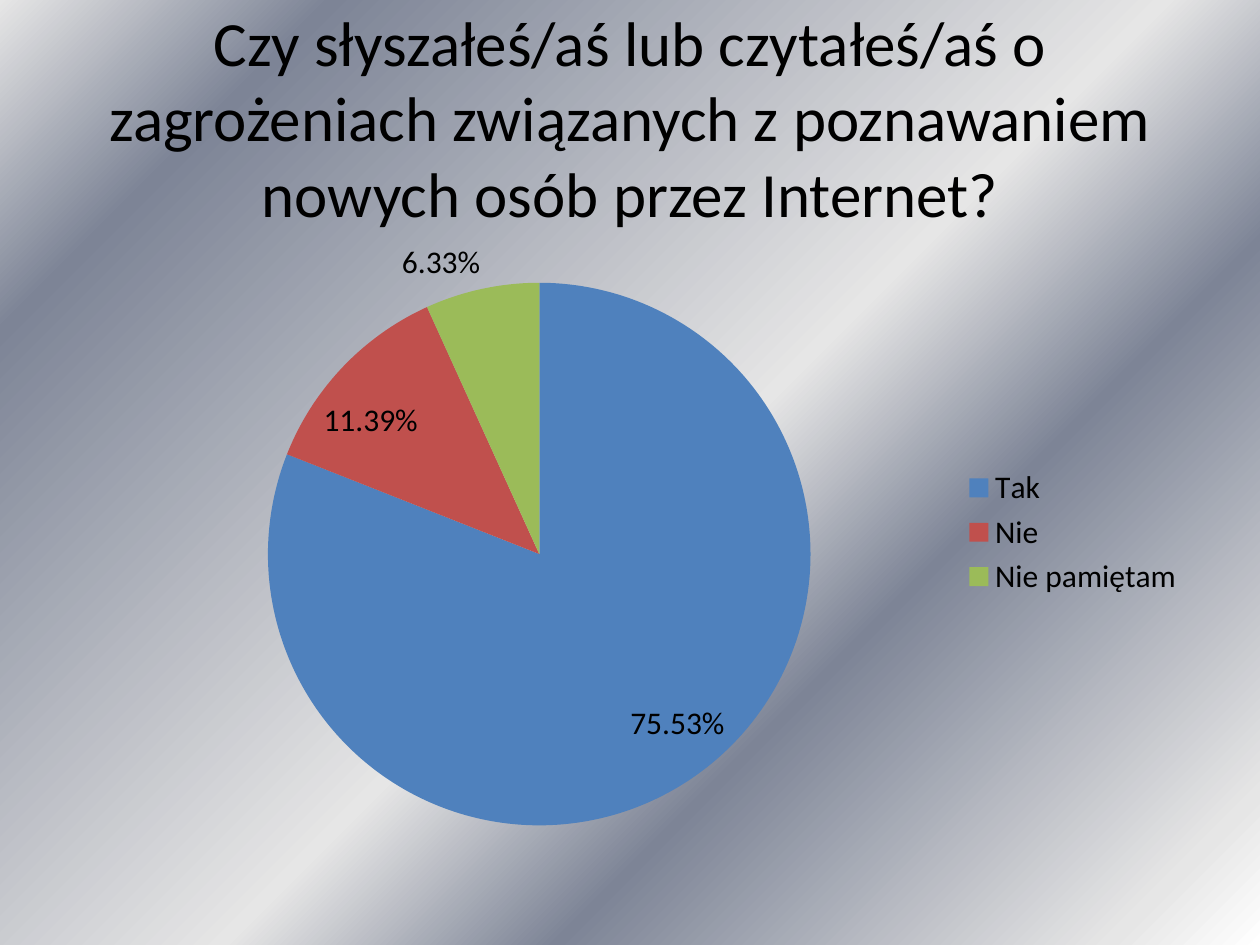
from dataclasses import dataclass

from lxml import etree
from pptx import Presentation
from pptx.chart.data import CategoryChartData
from pptx.dml.color import RGBColor
from pptx.enum.chart import XL_CHART_TYPE, XL_LABEL_POSITION, XL_LEGEND_POSITION
from pptx.enum.text import MSO_ANCHOR, PP_ALIGN
from pptx.oxml import parse_xml
from pptx.oxml.ns import nsdecls, qn
from pptx.util import Inches, Pt

PIE = XL_CHART_TYPE.PIE
BEST_FIT = XL_LABEL_POSITION.BEST_FIT
RIGHT = XL_LEGEND_POSITION.RIGHT
MIDDLE = MSO_ANCHOR.MIDDLE
CENTER = PP_ALIGN.CENTER


@dataclass(frozen=True)
class Theme:
    font: str = "Calibri"
    ink: str = "000000"
    title: int = 36
    label: int = 18
    slices: tuple = ("4F81BD", "C0504D", "9BBB59")
    # Background stops: percent, colour
    stops: tuple = ((0, "FFFFFF"), (7, "E6E6E6"), (32, "7D8496"),
                    (47, "E6E6E6"), (85, "7D8496"), (100, "E6E6E6"))
    angle: int = 135


class Page:
    def __init__(self, slide, theme):
        self.slide = slide
        self.theme = theme

    def style(self, font, size):
        font.name = self.theme.font
        font.size = Pt(size)
        font.color.rgb = RGBColor.from_string(self.theme.ink)

    def backdrop(self):
        fill = self.slide.background.fill
        fill.gradient()
        fill.gradient_angle = self.theme.angle
        stops = next(self.slide.element.iter(qn("a:gsLst")))
        for old in list(stops):
            stops.remove(old)
        for place, color in self.theme.stops:
            stop = etree.SubElement(stops, qn("a:gs"), pos=str(place * 1000))
            etree.SubElement(stop, qn("a:srgbClr"), val=color)

    def text(self, words, *, box, size, align=CENTER, anchor=MIDDLE):
        shape = self.slide.shapes.add_textbox(*map(Inches, box))
        frame = shape.text_frame
        frame.word_wrap = True
        frame.vertical_anchor = anchor
        para = frame.paragraphs[0]
        para.alignment = align
        run = para.add_run()
        run.text = words
        self.style(run.font, size)

    def pie(self, name, shares, *, box, plot):
        """Draw a pie; plot is its place as fractions of the chart box."""
        data = CategoryChartData(number_format="0.00%")
        data.categories = list(shares)
        data.add_series(name, list(shares.values()))
        frame = self.slide.shapes.add_chart(PIE, *map(Inches, box), data)
        chart = frame.chart
        chart.has_title = False
        self.style(chart.font, self.theme.label)
        chart.has_legend = True
        chart.legend.position = RIGHT
        chart.legend.include_in_layout = False

        pie = chart.plots[0]
        pie.vary_by_categories = True
        for spot, color in enumerate(self.theme.slices):
            fill = pie.series[0].points[spot].format.fill
            fill.solid()
            fill.fore_color.rgb = RGBColor.from_string(color)
        pie.has_data_labels = True
        labels = pie.data_labels
        labels.show_value = True
        labels.show_percentage = False
        labels.number_format = "0.00%"
        labels.number_format_is_linked = False
        labels.position = BEST_FIT
        self.style(labels.font, self.theme.label)
        self.place(chart, plot)

    def place(self, chart, plot):
        """Fix the inner plot area by hand."""
        modes = '<c:xMode val="edge"/><c:yMode val="edge"/>'
        sides = "".join(f'<c:{key} val="{part}"/>'
                        for key, part in zip("xywh", plot))
        layout = parse_xml(
            f'<c:layout {nsdecls("c")}><c:manualLayout>'
            f'<c:layoutTarget val="inner"/>{modes}{sides}'
            '</c:manualLayout></c:layout>')
        area = next(chart.element.iter(qn("c:plotArea")))
        for old in area.findall(qn("c:layout")):
            area.remove(old)
        area.insert(0, layout)


def main():
    deck = Presentation()
    deck.slide_width = Inches(10)
    deck.slide_height = Inches(7.5)
    theme = Theme()
    page = Page(deck.slides.add_slide(deck.slide_layouts[6]), theme)
    page.backdrop()
    page.text("Czy słyszałeś/aś lub czytałeś/aś o zagrożeniach związanych "
              "z poznawaniem nowych osób przez Internet?",
              box=(0.5, 0.3, 9, 1.25), size=theme.title)
    page.pie("Series 1",
             {"Tak ": 0.7553, "Nie": 0.1139, "Nie pamiętam": 0.0633},
             box=(0.5, 1.75, 9, 4.95), plot=(0.18, 0.1, 0.48, 0.87))
    deck.save("out.pptx")


if __name__ == "__main__":
    main()
